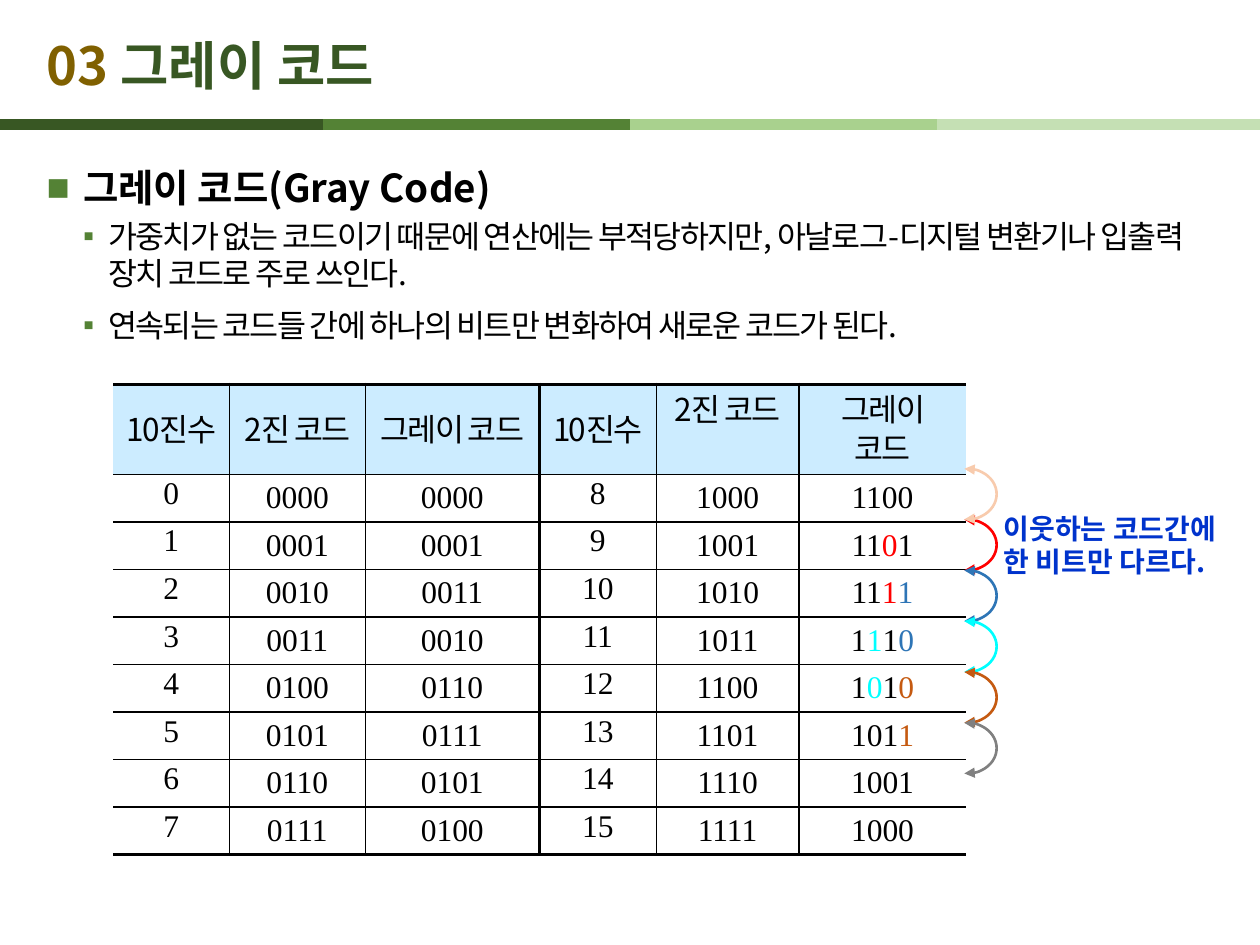
import pptx
import pptx.dml.color
import pptx.enum.shapes
import pptx.enum.text
import pptx.oxml
import pptx.oxml.ns
import pptx.util
from pptx.util import Inches

KOREAN = "Noto Sans CJK KR"
LATIN = "Times New Roman"
BLACK, RED, BLUE, CYAN, ORANGE = "000000", "FF0000", "2E75B6", "00FFFF", "C55A11"
ANCHOR = pptx.enum.text.MSO_ANCHOR
ALIGN = pptx.enum.text.PP_ALIGN


def color(value):
    """Turn a hex string into a colour."""
    return pptx.dml.color.RGBColor.from_string(value)


def apply_format(target, values):
    """Set each named attribute of the target."""
    for name, value in values.items():
        setattr(target, name, value)


def add_element(parent, tag, content="", **attributes):
    """Append a drawing element with attributes and inner XML."""
    listed = "".join(f' {name}="{value}"' for name, value in attributes.items())
    namespace = pptx.oxml.ns.nsdecls("a")
    parent.append(pptx.oxml.parse_xml(f"<a:{tag} {namespace}{listed}>{content}</a:{tag}>"))


def solid(value):
    """Give the XML of a solid fill."""
    return f'<a:solidFill><a:srgbClr val="{value}"/></a:solidFill>'


def add_run(paragraph, text, size, hue=BLACK, bold=False, font=KOREAN, tracking=0):
    """Add a formatted run to a paragraph."""
    run = paragraph.add_run()
    run.text = text
    apply_format(run.font, {"size": pptx.util.Pt(size), "bold": bold, "name": font})
    run.font.color.rgb = color(hue)
    properties = run.font._element
    properties.set("kern", "0")
    if tracking:
        properties.set("spc", str(tracking * 100))
    add_element(properties, "ea", typeface=font)


def place(shape, box):
    """Move a shape to a box given in inches."""
    apply_format(shape, dict(zip(("left", "top", "width", "height"), map(Inches, box))))


def add_title(slide, box):
    """Fill the title placeholder."""
    title = slide.shapes.title
    place(title, box)
    frame = title.text_frame
    apply_format(frame, {"vertical_anchor": ANCHOR.MIDDLE, "word_wrap": True,
                         "auto_size": pptx.enum.text.MSO_AUTO_SIZE.NONE})
    paragraph = frame.paragraphs[0]
    paragraph.alignment = ALIGN.LEFT
    add_run(paragraph, "03 ", 30, "806000", True)
    add_run(paragraph, "그레이 코드", 30, "385723", True)


def add_band(slide, box):
    """Draw the four-tone rule under the title."""
    left, top, width = box
    length = 2.56
    starts = (0, length, width / 2, width - length)
    for start, hue in zip(starts, ("385723", "548235", "A9D18E", "C5E0B4")):
        line = slide.shapes.add_connector(
            pptx.enum.shapes.MSO_CONNECTOR.STRAIGHT, Inches(left + start), Inches(top),
            Inches(left + start + length), Inches(top))
        line.line.color.rgb = color(hue)
        line.line.width = pptx.util.Pt(6)
        add_element(line._element.spPr, "effectLst")


def add_body(slide, box):
    """Fill the body placeholder with the heading and its two points."""
    body = slide.placeholders[1]
    place(body, box)
    frame = body.text_frame
    apply_format(frame, {"word_wrap": True, "vertical_anchor": ANCHOR.TOP,
                         "auto_size": pptx.enum.text.MSO_AUTO_SIZE.NONE})
    heading = {"level": 0, "line_spacing": 1.5, "space_before": pptx.util.Pt(0)}
    point = {"level": 1, "line_spacing": 1.0, "space_before": pptx.util.Pt(3.6),
             "space_after": pptx.util.Pt(4)}
    items = (
        ("그레이 코드(Gray Code)", heading, "■", 0.29, 0.29, 22, True, 0),
        ("가중치가 없는 코드이기 때문에 연산에는 부적당하지만, 아날로그-디지털 변환기나 "
         "입출력 장치 코드로 주로 쓰인다.", point, "▪", 0.49, 0.2, 18, False, -1),
        ("연속되는 코드들 간에 하나의 비트만 변화하여 새로운 코드가 된다.",
         point, "▪", 0.49, 0.2, 18, False, -1),
    )
    for index, (text, values, bullet, margin, hanging, size, bold, tracking) in enumerate(items):
        paragraph = frame.add_paragraph() if index else frame.paragraphs[0]
        apply_format(paragraph, values)
        properties = paragraph._p.get_or_add_pPr()
        properties.set("marL", str(Inches(margin)))
        properties.set("indent", str(-Inches(hanging)))
        add_element(properties, "buClr", '<a:srgbClr val="548235"/>')
        add_element(properties, "buFont", typeface=LATIN)
        add_element(properties, "buChar", char=bullet)
        add_run(paragraph, text, size, BLACK, bold, tracking=tracking)


def set_borders(cell, widths):
    """Draw the left, right, top and bottom borders; zero means none."""
    properties = cell._tc.get_or_add_tcPr()
    for side, width in zip("LRTB", widths):
        if width:
            add_element(properties, f"ln{side}", solid(BLACK), w=pptx.util.Pt(width))
        else:
            add_element(properties, f"ln{side}", "<a:noFill/>", w=0)


def add_code_table(slide, box):
    """Build the table of decimal, binary and Gray codes."""
    header_height, count = 0.71, 8
    titles = ("10진수", "2진 코드", "그레이 코드") * 2
    bit_colors = {(9, 2): RED, (10, 2): RED, (10, 3): BLUE, (11, 1): CYAN, (11, 3): BLUE,
                  (12, 1): CYAN, (12, 3): ORANGE, (13, 3): ORANGE}
    table = slide.shapes.add_table(count + 1, len(titles), *map(Inches, box)).table
    apply_format(table, {"first_row": False, "horz_banding": False})
    for column, width in zip(table.columns, (0.92, 1.08, 1.38, 0.93, 1.13, 1.33)):
        column.width = Inches(width)
    for index, row in enumerate(table.rows):
        row.height = Inches((box[3] - header_height) / count if index else header_height)
        for position, cell in enumerate(row.cells):
            cell.vertical_anchor = ANCHOR.TOP
            edges = (0, 1, 1, 2.25, 1, 1, 0)
            set_borders(cell, (edges[position], edges[position + 1],
                               1 if index else 2.25, 2.25 if index == count else 1))
            paragraph = cell.text_frame.paragraphs[0]
            paragraph.alignment = ALIGN.CENTER
            half, kind = divmod(position, 3)
            if kind == 0 or index == 0:
                paragraph.line_spacing = 0.85
            if index == 0:
                cell.fill.solid()
                cell.fill.fore_color.rgb = color("CCECFF")
                cell.vertical_anchor = ANCHOR.TOP if position == 4 else ANCHOR.MIDDLE
                add_run(paragraph, titles[position], 18, tracking=-1)
                continue
            cell.fill.background()
            number = half * count + index - 1
            text = (str(number), f"{number:04b}", f"{number ^ number >> 1:04b}")[kind]
            hues = [bit_colors.get((number, bit), BLACK) if kind == 2 else BLACK
                    for bit in range(len(text))]
            start = 0
            for end in range(1, len(text) + 1):
                if end == len(text) or hues[end] != hues[start]:
                    add_run(paragraph, text[start:end], 18, hues[start], font=LATIN)
                    start = end


def add_callout(slide, box):
    """Write the remark beside the arcs."""
    frame = slide.shapes.add_textbox(*map(Inches, box)).text_frame
    frame.word_wrap = True
    for index, text in enumerate(("이웃하는 코드간에", "한 비트만 다르다.")):
        paragraph = frame.add_paragraph() if index else frame.paragraphs[0]
        add_run(paragraph, text, 16, "0033CC", True)


def add_arcs(slide, box):
    """Join neighbouring Gray codes with double-headed arcs."""
    left, top, width, height = box
    steps = {1: RED, 2: BLUE, 3: CYAN, 4: ORANGE, 0: "F8CBAD", 5: "808080"}
    step_height = height / len(steps)
    for step, hue in steps.items():
        arc = slide.shapes.add_shape(
            pptx.enum.shapes.MSO_SHAPE.ARC, Inches(left), Inches(top + step * step_height),
            Inches(width), Inches(step_height))
        for index, degrees in enumerate((264, 96)):
            arc.adjustments[index] = degrees * 0.6
        arc.shadow.inherit = False
        arc.fill.background()
        arc.line.color.rgb = color(hue)
        arc.line.width = pptx.util.Pt(1.5)
        for end in ("headEnd", "tailEnd"):
            add_element(arc.line._get_or_add_ln(), end, type="triangle")


def main():
    """Build and save the slide."""
    presentation = pptx.Presentation()
    apply_format(presentation, {"slide_width": Inches(10), "slide_height": Inches(7.5)})
    slide = presentation.slides.add_slide(presentation.slide_layouts[1])
    add_band(slide, (0, 0.99, 10))
    add_title(slide, (0.27, 0.21, 8.27, 0.6))
    add_body(slide, (0.27, 1.07, 9.45, 5.98))
    add_code_table(slide, (0.9, 3.05, 6.77, 3.73))
    add_callout(slide, (7.87, 4.01, 2.06, 0.64))
    add_arcs(slide, (7.44, 3.72, 0.47, 2.42))
    presentation.save("out.pptx")


if __name__ == "__main__":
    main()
